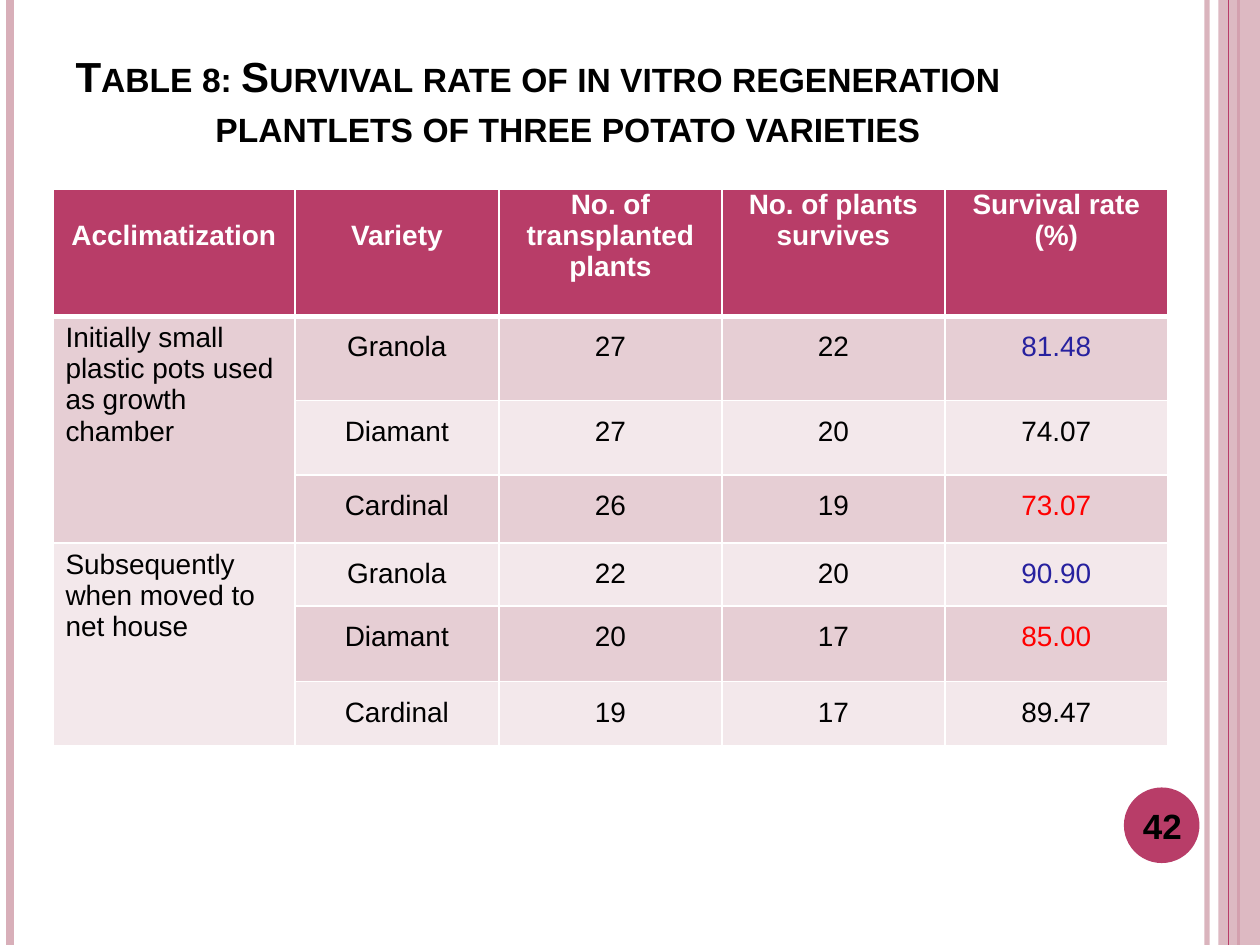
from lxml.etree import SubElement
from pptx import Presentation
from pptx.dml.color import RGBColor
from pptx.enum.shapes import MSO_CONNECTOR, MSO_SHAPE
from pptx.enum.text import MSO_ANCHOR as ANCHOR, MSO_AUTO_SIZE as AUTO, PP_ALIGN as ALIGN
from pptx.oxml.ns import qn
from pptx.util import Inches, Pt

FONT = "Arial"
BERRY = RGBColor(0xB8, 0x3D, 0x68)
ROSE = RGBColor(0xD8, 0xAF, 0xB9)
BAND_DARK = RGBColor(0xE6, 0xCE, 0xD4)
BAND_LIGHT = RGBColor(0xF3, 0xE8, 0xEB)
WHITE = RGBColor(0xFF, 0xFF, 0xFF)
BLACK = RGBColor(0, 0, 0)
BLUE = RGBColor(0x27, 0x21, 0x9F)
RED = RGBColor(0xFF, 0, 0)

COL_WIDTHS = [1.92, 1.62, 1.77, 1.77, 1.77]
ROW_HEIGHTS = [1.01, 0.67, 0.59, 0.54, 0.5, 0.6, 0.51]
HEADERS = ["Acclimatization", "Variety", "No. of transplanted plants",
           "No. of plants survives", "Survival rate\n(%)"]
STAGES = ["Initially small plastic pots used as growth chamber",
          "Subsequently when moved to net house"]
RESULTS = [
    ("Granola", "27", "22", "81.48"),
    ("Diamant", "27", "20", "74.07"),
    ("Cardinal", "26", "19", "73.07"),
    ("Granola", "22", "20", "90.90"),
    ("Diamant", "20", "17", "85.00"),
    ("Cardinal", "19", "17", "89.47"),
]
RATE_COLORS = {"81.48": BLUE, "90.90": BLUE, "73.07": RED, "85.00": RED}


def set_alpha(fill_parent, percent):
    color = next(fill_parent.iter(qn("a:srgbClr")))
    SubElement(color, qn("a:alpha"), val=str(percent * 1000))


def style_text(tf, size, color, bold=False, align=None, spacing=None):
    for p in tf.paragraphs:
        p.alignment = align
        p.line_spacing = spacing
        for r in p.runs:
            r.font.name, r.font.size, r.font.bold = FONT, Pt(size), bold
            r.font.color.rgb = color


def add_rule(slide, x, width, color, alpha=None):
    line = slide.shapes.add_connector(
        MSO_CONNECTOR.STRAIGHT, Inches(x), 0, Inches(x), Inches(7.5))
    line.line.width = Pt(width)
    line.line.color.rgb = color
    if alpha:
        set_alpha(line.line._ln, alpha)
    SubElement(line._element.spPr, qn("a:effectLst"))


def add_fill_shape(slide, kind, x, y, w, h, color, alpha=None):
    sp = slide.shapes.add_shape(kind, Inches(x), Inches(y), Inches(w), Inches(h))
    sp.shadow.inherit = False
    sp.fill.solid()
    sp.fill.fore_color.rgb = color
    sp.line.fill.background()
    if alpha:
        set_alpha(sp._element.spPr, alpha)


def set_title(slide):
    title = slide.shapes.title
    title.left, title.top = Inches(0.5), Inches(0)
    title.width, title.height = Inches(8.58), Inches(1.25)
    tf = title.text_frame
    tf.auto_size, tf.vertical_anchor = AUTO.NONE, ANCHOR.BOTTOM
    tf.text = ("Table 8: Survival rate of in vitro regeneration\v"
               "plantlets of three potato varieties")
    style_text(tf, 24, BLACK, True, ALIGN.LEFT)
    p = tf.paragraphs[0]
    # Hanging indent pushes the second line to the right
    pPr = p._p.get_or_add_pPr()
    pPr.set("marL", str(Inches(1.11)))
    pPr.set("indent", str(-Inches(1.11)))
    for r in p.runs:
        r.font._element.set("cap", "small")


def set_borders(cell, top=1, bottom=1):
    tcPr = cell._tc.get_or_add_tcPr()
    for side, width in zip("LRTB", (1, 1, top, bottom)):
        ln = SubElement(tcPr, qn(f"a:ln{side}"), w=str(Pt(width)))
        fill = SubElement(ln, qn("a:solidFill"))
        SubElement(fill, qn("a:srgbClr"), val=str(WHITE))


def fill_cell(cell, color):
    cell.fill.solid()
    cell.fill.fore_color.rgb = color


def set_cell(cell, text, color, bold=False, spacing=None, top=0):
    cell.margin_left = cell.margin_right = Inches(0.07)
    cell.margin_top, cell.margin_bottom = Inches(top), 0
    cell.text_frame.text = text
    style_text(cell.text_frame, 16, color, bold, ALIGN.CENTER, spacing)


def add_survival_table(slide):
    table = slide.shapes.add_table(
        len(ROW_HEIGHTS), len(COL_WIDTHS), Inches(0.42), Inches(1.5),
        Inches(8.83), Inches(4.42)).table
    for col, width in zip(table.columns, COL_WIDTHS):
        col.width = Inches(width)
    for row, height in zip(table.rows, ROW_HEIGHTS):
        row.height = Inches(height)

    # Borders and banding
    for i, row in enumerate(table.rows):
        for cell in row.cells:
            set_borders(cell, top=3 if i == 1 else 1, bottom=3 if i == 0 else 1)
            fill_cell(cell, BERRY if i == 0 else BAND_DARK if i % 2 else BAND_LIGHT)

    # Header: the first two labels sit one line lower
    for j, text in enumerate(HEADERS):
        set_cell(table.cell(0, j), text, WHITE, True, top=0.25 if j < 2 else 0)

    # Each stage spans three varieties
    for k, text in enumerate(STAGES):
        first = 1 + 3 * k
        cell = table.cell(first, 0)
        cell.merge(table.cell(first + 2, 0))
        cell.text_frame.text = text
        style_text(cell.text_frame, 16, BLACK)

    for i, values in enumerate(RESULTS, 1):
        for j, text in enumerate(values, 1):
            set_cell(table.cell(i, j), text, RATE_COLORS.get(text, BLACK), spacing=1.5)


def add_page_number(slide):
    add_fill_shape(slide, MSO_SHAPE.OVAL, 8.92, 6.25, 0.6, 0.6, BERRY)
    tf = slide.shapes.add_textbox(
        Inches(8.89), Inches(6.27), Inches(0.67), Inches(0.57)).text_frame
    tf.word_wrap, tf.vertical_anchor = True, ANCHOR.MIDDLE
    tf.text = "42"
    style_text(tf, 20, BLACK, True, ALIGN.CENTER)


def main():
    prs = Presentation()
    prs.slide_width, prs.slide_height = Inches(10), Inches(7.5)
    slide = prs.slides.add_slide(prs.slide_layouts[5])

    # Vertical side decoration
    add_rule(slide, 9.58, 3, ROSE, 93)
    add_rule(slide, 0.08, 4.5, ROSE)
    add_rule(slide, 9.83, 1.5, BERRY)
    add_fill_shape(slide, MSO_SHAPE.RECTANGLE, 9.67, 0, 0.33, 7.5, ROSE, 87)
    add_rule(slide, 9.75, 0.75, BERRY)

    set_title(slide)
    add_survival_table(slide)
    add_page_number(slide)
    prs.save("out.pptx")


if __name__ == "__main__":
    main()
